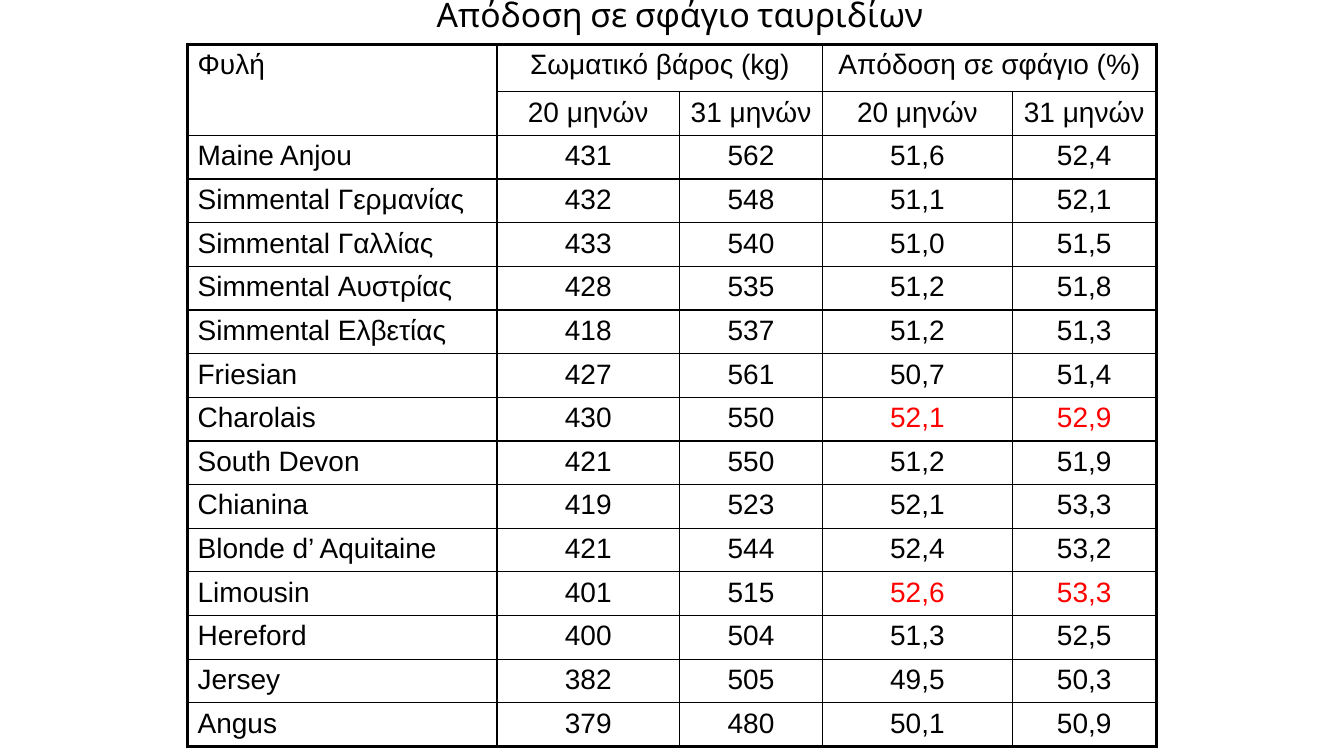
from dataclasses import dataclass

from lxml import etree
from pptx import Presentation
from pptx import util as u
from pptx.dml.color import RGBColor
from pptx.enum import text
from pptx.oxml import ns


@dataclass(frozen=True)
class Theme:
    ink: str = "000000"
    accent: str = "FF0000"
    title_font: str = "Cabin"
    table_font: str = "Arial"
    title_size: int = 24
    table_size: int = 20
    thin: float = 1
    thick: float = 2.25


THEME = Theme()
PLAIN_STYLE = "{2D5ABB26-0587-4C30-8999-92F81FD0307C}"
COLUMN_WIDTHS = [3.07, 1.81, 1.42, 1.88, 1.43]
HEADER_HEIGHT = 0.47
HEADINGS = [
    ("Φυλή", "Σωματικό βάρος (kg)", "", "Απόδοση σε σφάγιο (%)", ""),
    ("", "20 μηνών", "31 μηνών", "20 μηνών", "31 μηνών"),
]
MERGES = [((0, 0), (1, 0)), ((0, 1), (0, 2)), ((0, 3), (0, 4))]
BREEDS = [
    ("Maine Anjou", "431", "562", "51,6", "52,4"),
    ("Simmental Γερμανίας", "432", "548", "51,1", "52,1"),
    ("Simmental Γαλλίας", "433", "540", "51,0", "51,5"),
    ("Simmental Αυστρίας", "428", "535", "51,2", "51,8"),
    ("Simmental Ελβετίας", "418", "537", "51,2", "51,3"),
    ("Friesian", "427", "561", "50,7", "51,4"),
    ("Charolais", "430", "550", "52,1", "52,9"),
    ("South Devon", "421", "550", "51,2", "51,9"),
    ("Chianina", "419", "523", "52,1", "53,3"),
    ("Blonde d’ Aquitaine", "421", "544", "52,4", "53,2"),
    ("Limousin", "401", "515", "52,6", "53,3"),
    ("Hereford", "400", "504", "51,3", "52,5"),
    ("Jersey", "382", "505", "49,5", "50,3"),
    ("Angus", "379", "480", "50,1", "50,9"),
]
HIGHLIGHTED = {"Charolais", "Limousin"}


def write(para, words, font, size, color, align):
    para.alignment = align
    span = para.add_run()
    span.text = words
    span.font.name = font
    span.font.size = u.Pt(size)
    span.font.color.rgb = RGBColor.from_string(color)


def add_border(cell, side, width):
    line = etree.SubElement(
        cell._tc.get_or_add_tcPr(), ns.qn(f"a:ln{side}"), w=str(u.Pt(width))
    )
    fill = etree.SubElement(line, ns.qn("a:solidFill"))
    etree.SubElement(fill, ns.qn("a:srgbClr"), val=THEME.ink)


def frame_cell(cell, row, column, row_count, column_count):
    height = cell.span_height if cell.is_merge_origin else 1
    width = cell.span_width if cell.is_merge_origin else 1
    on_edge = {
        "L": column == 0,
        "R": column + width == column_count,
        "T": row == 0,
        "B": row + height == row_count,
    }
    merged_side = ("L" if row == 0 else "T") if cell.is_spanned else None
    for side, outer in on_edge.items():
        if side != merged_side:
            add_border(cell, side, THEME.thick if outer else THEME.thin)
    cell.fill.background()


def place_title(page, left, top, width, height):
    box = page.shapes.title
    box.left, box.top = u.Inches(left), u.Inches(top)
    box.width, box.height = u.Inches(width), u.Inches(height)
    frame = box.text_frame
    frame.word_wrap = True
    frame.auto_size = text.MSO_AUTO_SIZE.NONE
    frame.vertical_anchor = text.MSO_ANCHOR.TOP
    write(frame.paragraphs[0], "Απόδοση σε σφάγιο ταυριδίων", THEME.title_font,
          THEME.title_size, THEME.ink, text.PP_ALIGN.CENTER)


def place_breed_table(page, left, top, width, height):
    rows = HEADINGS + BREEDS
    row_count, column_count = len(rows), len(COLUMN_WIDTHS)
    holder = page.shapes.add_table(
        row_count, column_count,
        u.Inches(left), u.Inches(top), u.Inches(width), u.Inches(height),
    )
    table = holder.table
    table.first_row = table.horz_banding = False
    table._tbl.tblPr.find(ns.qn("a:tableStyleId")).text = PLAIN_STYLE
    for column, share in zip(table.columns, COLUMN_WIDTHS):
        column.width = u.Inches(width * share / sum(COLUMN_WIDTHS))
    body_height = (height - HEADER_HEIGHT) / (row_count - 1)
    for index, row in enumerate(table.rows):
        row.height = u.Inches(body_height if index else HEADER_HEIGHT)
    for first, last in MERGES:
        table.cell(*first).merge(table.cell(*last))
    for row, values in enumerate(rows):
        for column, words in enumerate(values):
            cell = table.cell(row, column)
            frame_cell(cell, row, column, row_count, column_count)
            if not words:
                continue
            marked = values[0] in HIGHLIGHTED and column >= 3
            write(cell.text_frame.paragraphs[0], words, THEME.table_font,
                  THEME.table_size, THEME.accent if marked else THEME.ink,
                  text.PP_ALIGN.CENTER if column else text.PP_ALIGN.LEFT)


def main():
    deck = Presentation()
    deck.slide_width, deck.slide_height = u.Inches(13.33), u.Inches(7.5)
    page = deck.slides.add_slide(deck.slide_layouts[5])
    place_title(page, 2.02, -0.11, 9.45, 0.5)
    place_breed_table(page, 1.86, 0.44, 9.61, 6.97)
    deck.save("out.pptx")


if __name__ == "__main__":
    main()
